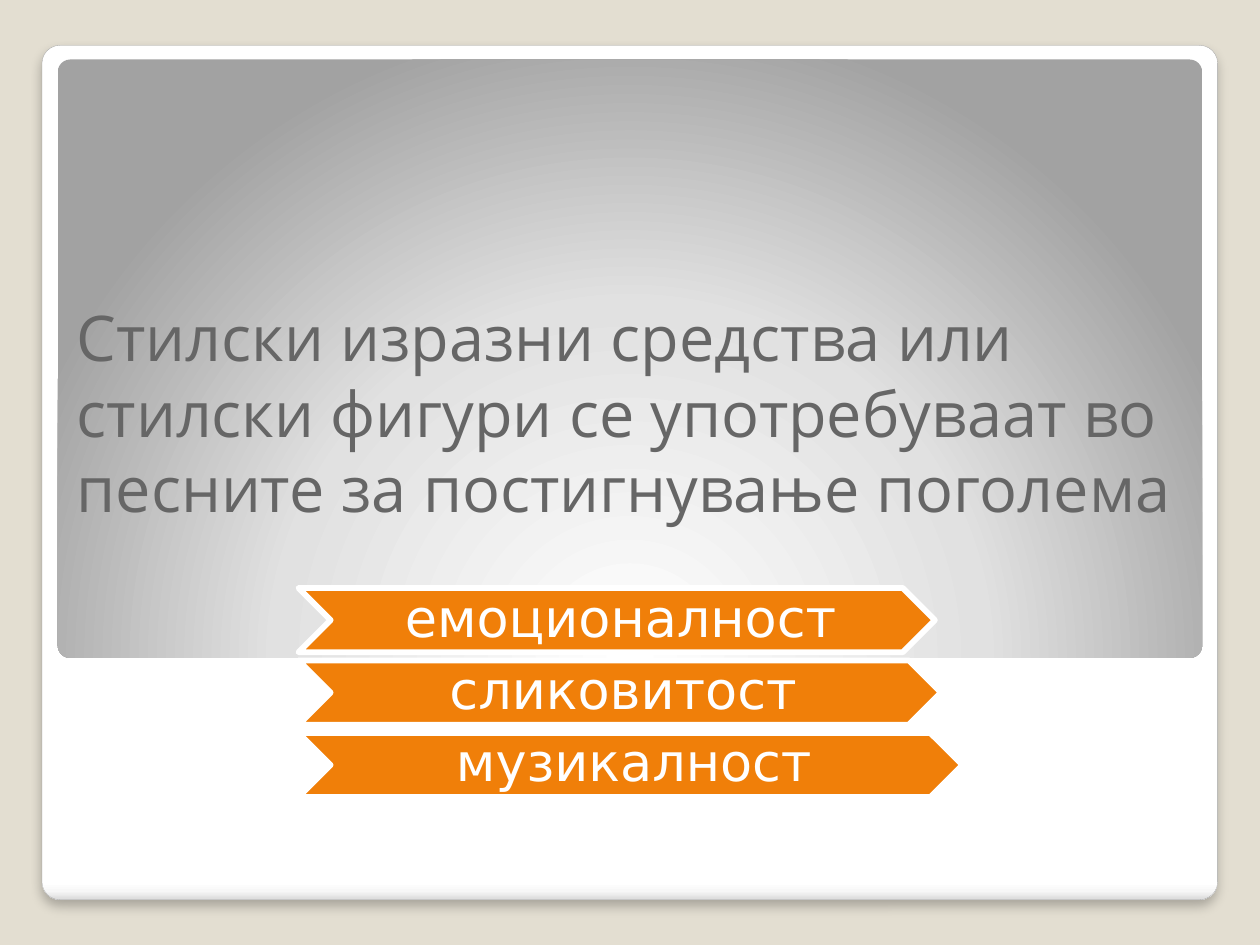
from lxml.etree import SubElement
from pptx import Presentation
from pptx.dml.color import RGBColor
from pptx.enum.shapes import MSO_SHAPE
from pptx.enum.text import MSO_ANCHOR, MSO_AUTO_SIZE, PP_ALIGN
from pptx.oxml import parse_xml
from pptx.oxml.ns import nsdecls, qn
from pptx.util import Pt

BACKDROP = RGBColor(0xE3, 0xDE, 0xD1)
EDGE = RGBColor(0xA4, 0xA4, 0xA4)
TITLE_GREY = RGBColor(0x66, 0x66, 0x66)
ORANGE = RGBColor(0xF0, 0x7F, 0x09)
WHITE = RGBColor(0xFF, 0xFF, 0xFF)

CARD_STOPS = [(0, "FFFFFF"), (98, "FFFFFF"), (99, "F7F7F7"), (100, "DADADA")]
PANEL_STOPS = [(0, "FFFFFF"), (55, "E1E1E1"), (100, "A2A2A2")]
LINEAR = '<a:lin ang="5400000" scaled="0"/>'
RADIAL = ('<a:path path="circle"><a:fillToRect l="50000" t="175000" '
          'r="50000" b="-75000"/></a:path>')

TITLE = ("Стилски изразни средства или стилски фигури се употребуваат "
         "во песните за постигнување поголема")
QUALITIES = [("емоционалност", 363.6, 327.6),
             ("сликовитост", 367.2, 330.5),
             ("музикалност", 379.4, 342.7)]
ROW_TOP, ROW_STEP, ROW_HEIGHT = 336, 41.4, 36.7


def apply_format(target, values):
    for name, value in values.items():
        setattr(target, name, value)


def add_plain_shape(page, kind, *bounds):
    shape = page.shapes.add_shape(kind, *map(Pt, bounds))
    shape.shadow.inherit = False
    return shape


def add_panel(page, bounds, stops, direction):
    panel = add_plain_shape(page, MSO_SHAPE.ROUNDED_RECTANGLE, *bounds)
    panel.adjustments[0] = 0.021
    panel.line.fill.background()
    marks = "".join(f'<a:gs pos="{place * 1000}"><a:srgbClr val="{colour}"/></a:gs>'
                    for place, colour in stops)
    gradient = parse_xml(f'<a:gradFill {nsdecls("a")} rotWithShape="1">'
                         f'<a:gsLst>{marks}</a:gsLst>{direction}</a:gradFill>')
    panel._element.spPr.find(qn("a:prstGeom")).addnext(gradient)
    return panel


def add_soft_shadow(shape):
    effects = shape._element.spPr.find(qn("a:effectLst"))
    shadow = SubElement(effects, qn("a:outerShdw"), blurRad=str(Pt(6)),
                        dist=str(Pt(4)), dir="5400000", algn="t", rotWithShape="0")
    colour = SubElement(shadow, qn("a:srgbClr"), val="000000")
    SubElement(colour, qn("a:alpha"), val="25000")


def write_text(box, text, frame_format, para_format, font_format, colour):
    frame = box.text_frame
    apply_format(frame, {"word_wrap": True, "auto_size": MSO_AUTO_SIZE.NONE,
                         **frame_format})
    para = frame.paragraphs[0]
    apply_format(para, para_format)
    span = para.add_run()
    span.text = text
    apply_format(span.font, font_format)
    span.font.color.rgb = colour


def place_title(page):
    title = page.shapes.title
    apply_format(title, {"left": Pt(36.7), "top": Pt(72),
                         "width": Pt(644.4), "height": Pt(228.2)})
    write_text(title, TITLE,
               {"vertical_anchor": MSO_ANCHOR.BOTTOM, "margin_left": Pt(7.2),
                "margin_right": Pt(7.2), "margin_top": Pt(3.6), "margin_bottom": 0},
               {"alignment": PP_ALIGN.LEFT},
               {"size": Pt(36), "name": "Open Sans"}, TITLE_GREY)
    page.shapes._spTree.append(title._element)


def add_quality(page, text, top, arrow_width, text_width):
    arrow = add_plain_shape(page, MSO_SHAPE.CHEVRON, 170.6, top, arrow_width, ROW_HEIGHT)
    arrow.fill.solid()
    arrow.fill.fore_color.rgb = ORANGE
    arrow.line.color.rgb = WHITE
    arrow.line.width = Pt(3.35)
    box = page.shapes.add_textbox(*map(Pt, (189.4, top, text_width, ROW_HEIGHT)))
    write_text(box, text,
               {"vertical_anchor": MSO_ANCHOR.MIDDLE, "margin_left": Pt(3),
                "margin_right": 0, "margin_top": Pt(1.5), "margin_bottom": Pt(1.5)},
               {"alignment": PP_ALIGN.CENTER, "line_spacing": 0.9},
               {"size": Pt(30), "name": "DejaVu Sans"}, WHITE)


def main():
    deck = Presentation()
    apply_format(deck, {"slide_width": Pt(720), "slide_height": Pt(540)})
    page = deck.slides.add_slide(deck.slide_layouts[5])
    page.background.fill.solid()
    page.background.fill.fore_color.rgb = BACKDROP

    card = add_panel(page, (24, 25.9, 671.8, 488.2), CARD_STOPS, LINEAR)
    card.line.color.rgb = EDGE
    card.line.width = Pt(0.16)
    add_soft_shadow(card)
    add_panel(page, (33, 34, 654, 342), PANEL_STOPS, RADIAL)

    place_title(page)
    for row, (text, arrow_width, text_width) in enumerate(QUALITIES):
        add_quality(page, text, ROW_TOP + row * ROW_STEP, arrow_width, text_width)
    deck.save("out.pptx")


if __name__ == "__main__":
    main()
